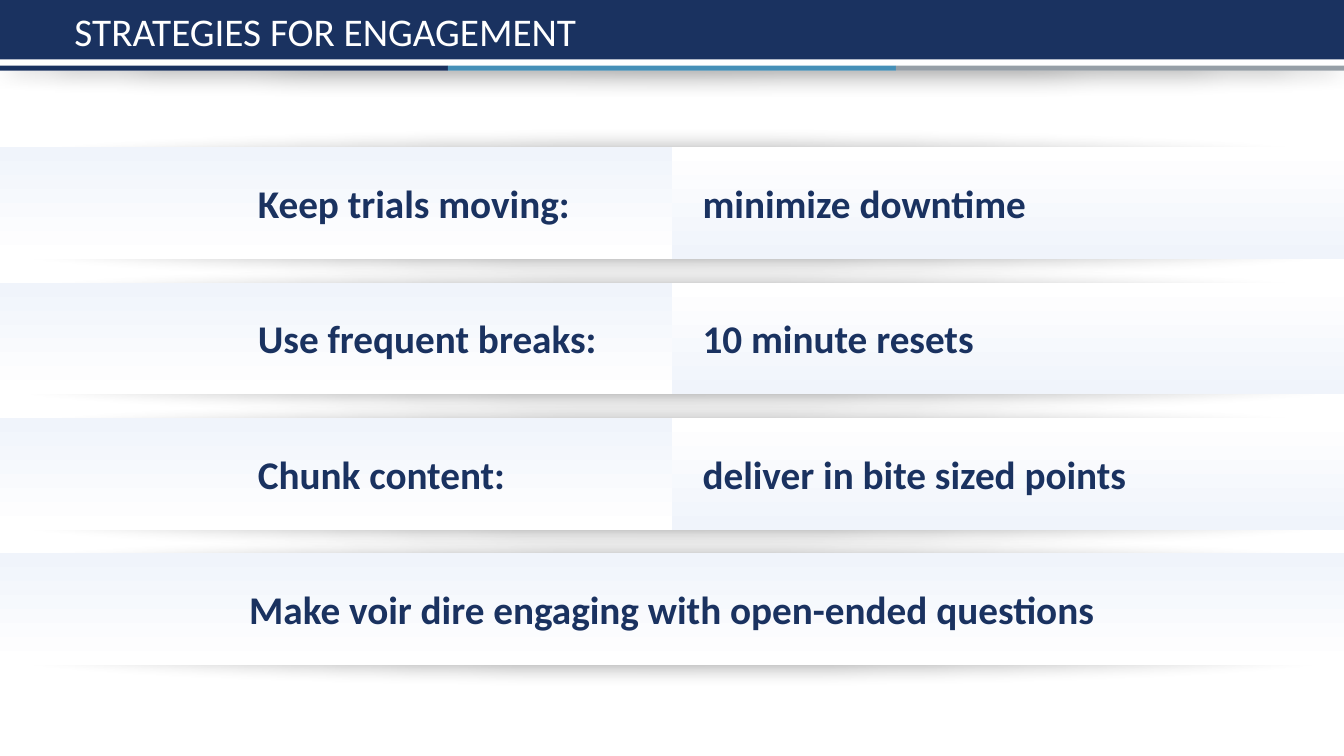
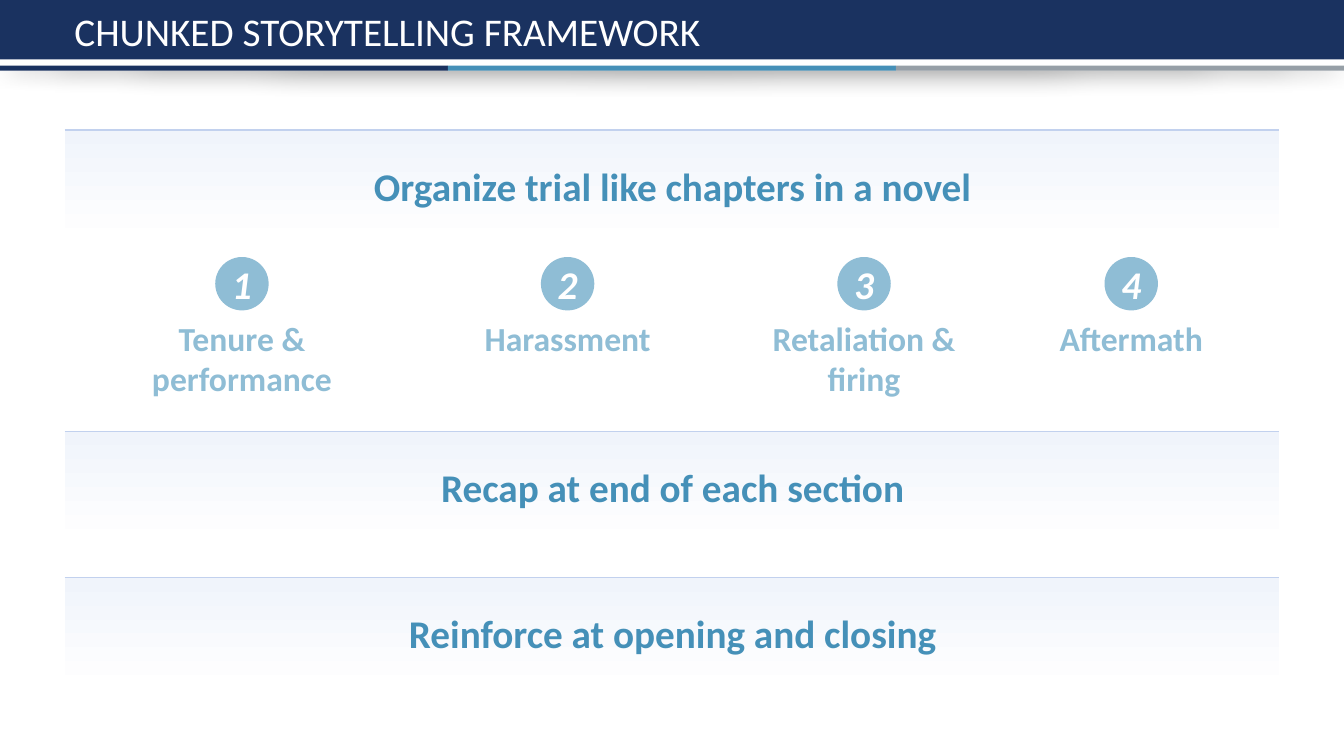
from dataclasses import dataclass

from lxml.etree import SubElement
from pptx import Presentation
from pptx.dml.color import RGBColor
from pptx.enum.shapes import MSO_CONNECTOR as Connector, MSO_SHAPE as Shape
from pptx.enum.text import MSO_ANCHOR as Anchor, MSO_AUTO_SIZE as AutoSize, PP_ALIGN as Align
from pptx.oxml.ns import qn
from pptx.util import Inches, Pt


@dataclass(frozen=True)
class Theme:
    font: str = "Calibri"
    navy: str = "1A3260"
    blue: str = "4590B8"
    light_blue: str = "8FBDD5"
    gray: str = "969FA7"
    white: str = "FFFFFF"
    tint: str = "F0F4FB"
    rule: str = "C2D1EE"
    shadow: str = "000000"
    large: int = 28
    medium: int = 24


THEME = Theme()
WIDTH, HEIGHT = 13.33, 7.5
MARGIN = 0.64
CONTENT_WIDTH = WIDTH - 2 * MARGIN
BAND_HEIGHT = 1.11
TEXT_OFFSET = 0.27
TEXT_HEIGHT = 0.57
DOWN, UP = 90, 270


class Deck:
    def __init__(self, theme):
        self.theme = theme
        self.presentation = Presentation()
        self.presentation.slide_width = Inches(WIDTH)
        self.presentation.slide_height = Inches(HEIGHT)
        self.slide = None

    def add_slide(self, title):
        theme = self.theme
        self.slide = self.presentation.slides.add_slide(self.presentation.slide_layouts[6])
        self.shadow_ellipse(0, 0.45, WIDTH, 0.24, DOWN)
        self.shape(0, 0, WIDTH, 0.7, theme.white)
        self.shape(0, 0, WIDTH, 0.59, theme.navy)
        stripe = WIDTH / 3
        for index, color in enumerate((theme.navy, theme.blue, theme.gray)):
            self.shape(index * stripe, 0.65, stripe, 0.05, color)
        self.text(title, MARGIN, 0, CONTENT_WIDTH, 0.59, theme.white,
                  bold=False, anchor=Anchor.BOTTOM, grow=False)

    def shape(self, left, top, width, height, color, kind=Shape.RECTANGLE):
        shape = self.slide.shapes.add_shape(
            kind, Inches(left), Inches(top), Inches(width), Inches(height))
        shape.shadow.inherit = False
        shape.line.fill.background()
        shape.fill.solid()
        shape.fill.fore_color.rgb = RGBColor.from_string(color)
        return shape

    def shadow_ellipse(self, left, top, width, height, angle):
        ellipse = self.shape(left, top, width, height, self.theme.white, Shape.OVAL)
        effects = ellipse._element.spPr.find(qn("a:effectLst"))
        shadow = SubElement(effects, qn("a:outerShdw"), blurRad=str(Pt(16)),
                            dist=str(Pt(3)), dir=str(angle * 60000), rotWithShape="0")
        color = SubElement(shadow, qn("a:srgbClr"), val=self.theme.shadow)
        SubElement(color, qn("a:alpha"), val="40000")

    def gradient(self, left, top, width, start, end):
        shape = self.shape(left, top, width, BAND_HEIGHT, start)
        shape.fill.gradient()
        shape.fill.gradient_angle = 270
        for stop, color in zip(shape.fill.gradient_stops, (start, end)):
            stop.color.rgb = RGBColor.from_string(color)

    def rule(self, left, top, width):
        line = self.slide.shapes.add_connector(
            Connector.STRAIGHT, Inches(left), Inches(top), Inches(left + width), Inches(top))
        line.line.color.rgb = RGBColor.from_string(self.theme.rule)
        line.line.width = Pt(1)
        SubElement(line._element.spPr, qn("a:effectLst"))

    def add_text_run(self, frame, text, color, size, align, bold=True, italic=False):
        paragraph = frame.paragraphs[0]
        paragraph.alignment = align
        run = paragraph.add_run()
        run.text = text
        run.font.name = self.theme.font
        run.font.size = Pt(size)
        run.font.bold = bold
        run.font.italic = italic
        run.font.color.rgb = RGBColor.from_string(color)

    def text(self, text, left, top, width, height, color, size=None, align=Align.LEFT,
             bold=True, anchor=Anchor.TOP, grow=True):
        box = self.slide.shapes.add_textbox(
            Inches(left), Inches(top), Inches(width), Inches(height))
        frame = box.text_frame
        frame.word_wrap = True
        frame.vertical_anchor = anchor
        frame.auto_size = AutoSize.SHAPE_TO_FIT_TEXT if grow else AutoSize.NONE
        self.add_text_run(frame, text, color, size or self.theme.large, align, bold)

    def strategy_row(self, top, strategy, detail=None):
        theme = self.theme
        self.shadow_ellipse(0.06, top + 0.48, 13.21, 0.59, DOWN)
        self.shadow_ellipse(0.06, top + 0.06, 13.21, 0.59, UP)
        text_top = top + TEXT_OFFSET
        if detail is None:
            self.gradient(0, top, WIDTH, theme.tint, theme.white)
            self.text(strategy, 1.91, text_top, 9.5, TEXT_HEIGHT, theme.navy,
                      align=Align.CENTER)
            return
        half = WIDTH / 2
        self.gradient(0, top, half, theme.tint, theme.white)
        self.gradient(half, top, half, theme.white, theme.tint)
        self.text(strategy, 2.46, text_top, 4.14, TEXT_HEIGHT, theme.navy)
        self.text(detail, 6.87, text_top, 5.56, TEXT_HEIGHT, theme.navy)

    def heading_band(self, top, text):
        theme = self.theme
        self.gradient(MARGIN, top, CONTENT_WIDTH, theme.tint, theme.white)
        self.rule(MARGIN, top, CONTENT_WIDTH)
        self.text(text, 3.14, top + TEXT_OFFSET, 7.06, TEXT_HEIGHT, theme.blue,
                  align=Align.CENTER)

    def chapter(self, number, center, label, width):
        theme = self.theme
        diameter = 0.53
        circle = self.shape(center - diameter / 2, 2.55, diameter, diameter,
                            theme.light_blue, Shape.OVAL)
        frame = circle.text_frame
        frame.word_wrap = False
        frame.vertical_anchor = Anchor.MIDDLE
        self.add_text_run(frame, str(number), theme.white, theme.large, Align.CENTER,
                          italic=True)
        self.text(label, center - width / 2, 3.1, width, 0.5, theme.light_blue,
                  theme.medium, Align.CENTER)


def build_strategies(deck):
    deck.add_slide("STRATEGIES FOR ENGAGEMENT")
    rows = (
        ("Keep trials moving:", "minimize downtime"),
        ("Use frequent breaks:", "10 minute resets"),
        ("Chunk content:", "deliver in bite sized points"),
        ("Make voir dire engaging with open-ended questions",),
    )
    first, last = 1.46, 5.49
    pitch = (last - first) / (len(rows) - 1)
    for index, row in enumerate(rows):
        deck.strategy_row(first + index * pitch, *row)


def build_framework(deck):
    deck.add_slide("CHUNKED STORYTELLING FRAMEWORK")
    for top, text in (
        (1.29, "Organize trial like chapters in a novel"),
        (4.28, "Recap at end of each section"),
        (5.73, "Reinforce at opening and closing"),
    ):
        deck.heading_band(top, text)
    chapters = (
        (2.4, "Tenure & performance", 2.68),
        (5.63, "Harassment", 2.68),
        (8.57, "Retaliation & firing", 2.1),
        (11.22, "Aftermath", 2.1),
    )
    for number, (center, label, width) in enumerate(chapters, start=1):
        deck.chapter(number, center, label, width)


def main():
    deck = Deck(THEME)
    build_strategies(deck)
    build_framework(deck)
    deck.presentation.save("out.pptx")


if __name__ == "__main__":
    main()
